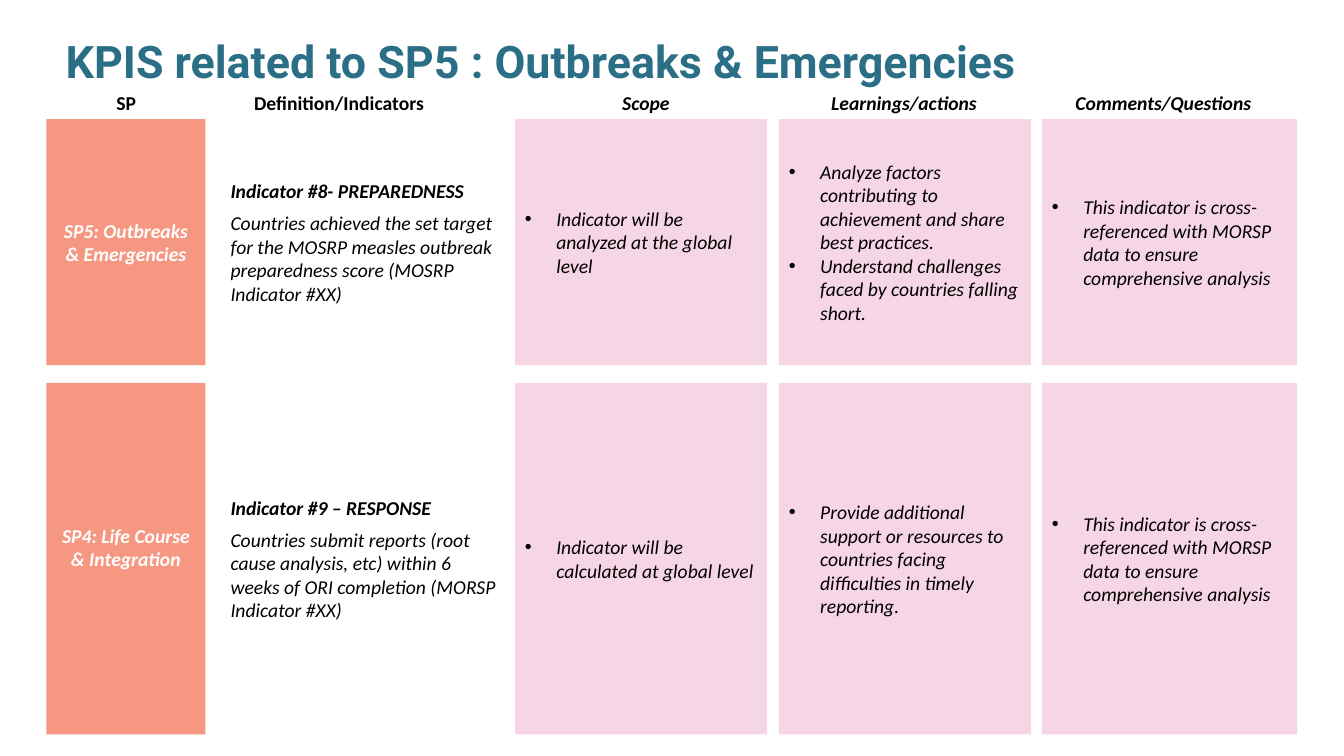
from lxml import etree
from pptx import Presentation
from pptx.dml.color import RGBColor
from pptx.enum import shapes, text
from pptx.oxml import ns
from pptx.util import Cm, Pt

TEAL = RGBColor(0x2B, 0x6F, 0x86)
CORAL = RGBColor(0xF6, 0x97, 0x82)
PINK = RGBColor(0xF6, 0xD5, 0xE5)
WHITE = RGBColor(0xFF, 0xFF, 0xFF)
BLACK = RGBColor(0, 0, 0)
LEFT, MID = text.PP_ALIGN.LEFT, text.PP_ALIGN.CENTER


def add_box(left, top, width, height, fill=None):
    if fill is None:
        box = slide.shapes.add_textbox(Cm(left), Cm(top), Cm(width), Cm(height))
    else:
        box = slide.shapes.add_shape(shapes.MSO_SHAPE.RECTANGLE,
                                     Cm(left), Cm(top), Cm(width), Cm(height))
        box.shadow.inherit = False
        box.fill.solid()
        box.fill.fore_color.rgb = fill
        box.line.fill.background()
    frame = box.text_frame
    frame.word_wrap = True
    frame.vertical_anchor = text.MSO_ANCHOR.MIDDLE
    return frame


def add_text(frame, lines, color=BLACK, align=LEFT, bold=False, italic=True,
             bullet=False, after=0):
    for i, line in enumerate(lines):
        para = frame.add_paragraph() if i else frame.paragraphs[0]
        para.alignment = align
        para.space_after = Pt(after)
        if bullet:
            props = para._p.get_or_add_pPr()
            props.set("marL", str(Cm(0.79)))
            props.set("indent", str(-Cm(0.79)))
            etree.SubElement(props, ns.qn("a:buFont"), typeface="Arial")
            etree.SubElement(props, ns.qn("a:buChar"), char="•")
        run = para.add_run()
        run.text = line
        font = run.font
        font.name, font.size = "Calibri", Pt(14)
        font.bold = bold or (after > 0 and i == 0)
        font.italic = italic
        font.color.rgb = color


deck = Presentation()
deck.slide_width, deck.slide_height = Cm(33.87), Cm(19.05)
slide = deck.slides.add_slide(deck.slide_layouts[5])

# Title
title = slide.shapes.title
title.left, title.top, title.width, title.height = Cm(1.4), Cm(0.46), Cm(30.89), Cm(1.88)
frame = title.text_frame
frame.auto_size = text.MSO_AUTO_SIZE.NONE
frame.vertical_anchor = text.MSO_ANCHOR.BOTTOM
para = frame.paragraphs[0]
para.alignment = LEFT
para.line_spacing = 0.9
run = para.add_run()
run.text = "KPIS related to SP5 : Outbreaks & Emergencies"
run.font.name, run.font.size, run.font.bold = "Roboto", Pt(32), True
run.font.color.rgb = TEAL

# Column heads: label, left, width, italic
heads = [
    ("SP", 1.47, 3.43, False),
    ("Definition/Indicators", 6.02, 5.05, False),
    ("Scope", 14.45, 3.66, True),
    ("Learnings/actions", 20.5, 4.57, True),
    ("Comments/Questions", 26.26, 6.12, True),
]
for label, left, width, slant in heads:
    frame = add_box(left, 2.29, width, 0.61)
    frame.margin_top = frame.margin_bottom = 0
    add_text(frame, [label], align=MID, bold=True, italic=slant)

# Rows: top, height, extra room below the first label, cells
cross = ["This indicator is cross-referenced with MORSP data to ensure "
         "comprehensive analysis"]
rows = [
    (3, 6.2, 0, [
        ["SP5: Outbreaks & Emergencies"],
        ["Indicator #8- PREPAREDNESS\u00a0",
         "Countries achieved the set target for the MOSRP measles outbreak "
         "preparedness score (MOSRP Indicator #XX)\u00a0"],
        ["Indicator will be analyzed at the global level"],
        ["Analyze factors contributing to achievement and share best practices.",
         "Understand challenges faced by countries falling short."],
        cross]),
    (9.65, 8.86, 0.59, [
        ["SP4: Life Course & Integration"],
        ["Indicator #9 – RESPONSE",
         "Countries submit reports (root cause analysis, etc) within 6 weeks "
         "of ORI completion (MORSP Indicator #XX)\u00a0"],
        ["Indicator will be calculated at global level"],
        ["Provide additional support or resources to countries facing "
         "difficulties in timely reporting."],
        cross]),
]
# Columns: left, width, fill, right margin, text style
point = dict(bullet=True)
cols = [
    (1.17, 4.01, CORAL, 0.25, dict(color=WHITE, align=MID, bold=True)),
    (5.56, 7.26, None, 0.25, dict(after=6)),
    (12.98, 6.35, PINK, 0.25, point),
    (19.63, 6.35, PINK, 0.08, point),
    (26.26, 6.43, PINK, 0.25, point),
]
for top, height, room, cells in rows:
    for (left, width, fill, right, style), lines in zip(cols, cells):
        frame = add_box(left, top, width, height, fill)
        frame.margin_right = Cm(right)
        if fill == CORAL:
            frame.margin_bottom = Cm(0.13 + room)
        add_text(frame, lines, **style)

deck.save("out.pptx")
